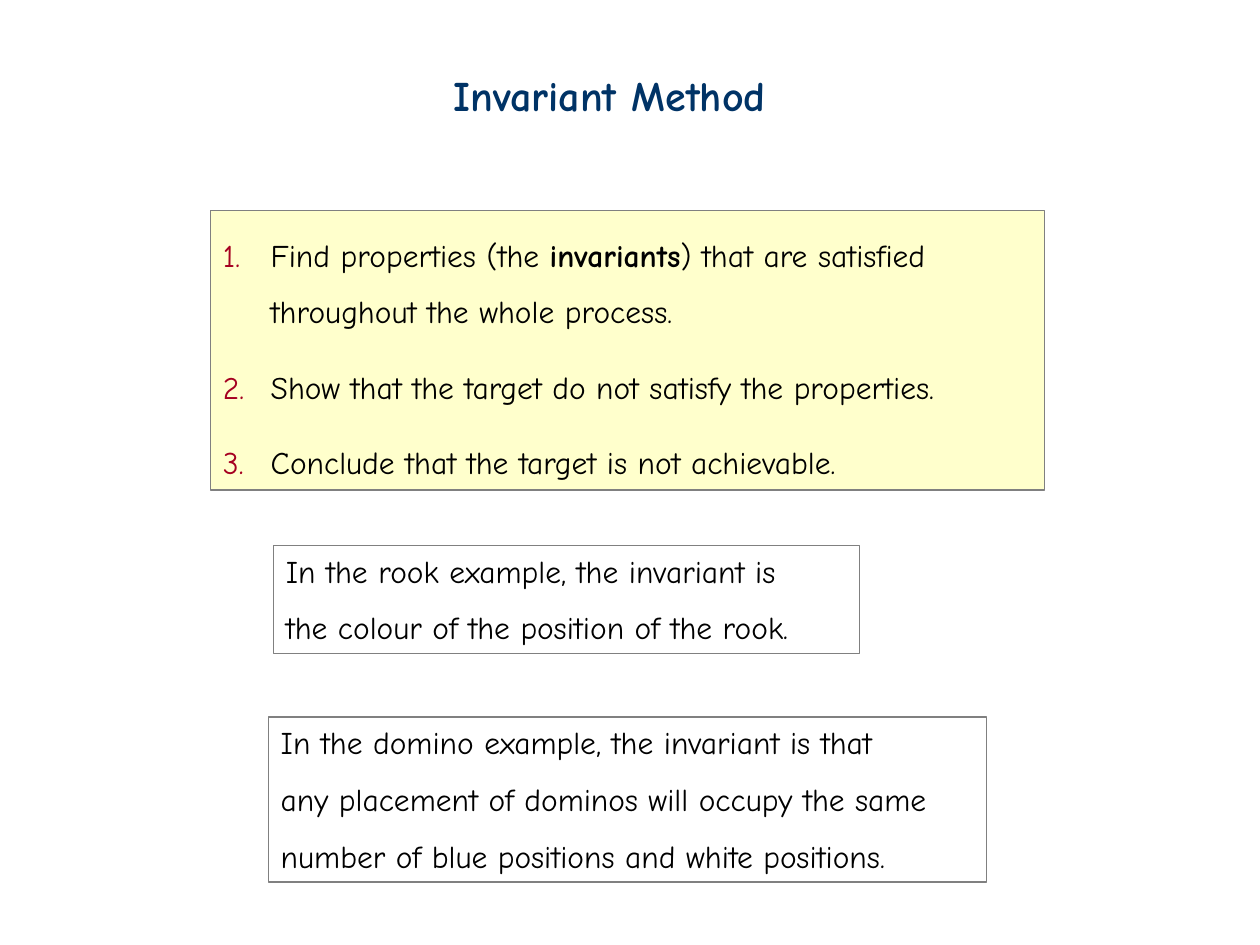
from dataclasses import dataclass

from lxml.etree import SubElement
from pptx import Presentation
from pptx.dml.color import RGBColor
from pptx.enum.shapes import MSO_SHAPE
from pptx.enum.text import MSO_ANCHOR, PP_ALIGN
from pptx.oxml.ns import qn
from pptx.util import Inches, Pt


@dataclass(frozen=True)
class Theme:
    """Colours, font and type sizes of the slide."""
    font: str = "Comic Neue"
    title_size: int = 24
    body_size: int = 18
    title: str = "003366"
    body: str = "000000"
    number: str = "A50021"
    panel: str = "FFFFCC"
    border: str = "808080"


THEME = Theme()


def number_paragraph(paragraph):
    """Give a paragraph a coloured automatic number and a hanging indent."""
    properties = paragraph._p.get_or_add_pPr()
    properties.set("marL", str(Inches(0.38)))
    properties.set("indent", str(-Inches(0.38)))
    colour = SubElement(properties, qn("a:buClr"))
    SubElement(colour, qn("a:srgbClr"), val=THEME.number)
    SubElement(properties, qn("a:buFont"), typeface=THEME.font)
    SubElement(properties, qn("a:buAutoNum"), type="arabicPeriod")


def write(paragraph, text, size=THEME.body_size, colour=THEME.body, bold=False):
    """Add one formatted run of text to a paragraph."""
    run = paragraph.add_run()
    run.text = text
    run.font.name = THEME.font
    run.font.size = Pt(size)
    run.font.bold = bold
    run.font.color.rgb = RGBColor.from_string(colour)


def add_paragraphs(frame, count):
    """Return the given number of left-aligned paragraphs in a text frame."""
    frame.word_wrap = True
    frame.vertical_anchor = MSO_ANCHOR.TOP
    paragraphs = [frame.paragraphs[0]]
    paragraphs += [frame.add_paragraph() for _ in range(count - 1)]
    for paragraph in paragraphs:
        paragraph.alignment = PP_ALIGN.LEFT
    return paragraphs


def add_title(slide, text):
    """Add the slide title."""
    title = slide.shapes.add_textbox(Inches(3.5), Inches(0.5), Inches(3.02), Inches(0.5))
    paragraph, = add_paragraphs(title.text_frame, 1)
    write(paragraph, text, size=THEME.title_size, colour=THEME.title, bold=True)


def add_panel(slide, left, top, width, height, fill=None):
    """Add a bordered rectangle and return its text frame."""
    panel = slide.shapes.add_shape(
        MSO_SHAPE.RECTANGLE, Inches(left), Inches(top), Inches(width), Inches(height))
    panel.shadow.inherit = False
    panel.line.color.rgb = RGBColor.from_string(THEME.border)
    panel.line.width = Pt(0.75)
    if fill:
        panel.fill.solid()
        panel.fill.fore_color.rgb = RGBColor.from_string(fill)
    else:
        panel.fill.background()
    return panel.text_frame


def add_steps(slide, steps):
    """Add the numbered steps, each a list of text and bold pairs."""
    frame = add_panel(slide, 1.67, 1.67, 6.62, 2.22, fill=THEME.panel)
    paragraphs = add_paragraphs(frame, len(steps))
    paragraphs[0].line_spacing = 1.5
    for paragraph in paragraphs[1:]:
        paragraph.space_before = Pt(21.5)
    for paragraph, step in zip(paragraphs, steps):
        number_paragraph(paragraph)
        for text, bold in step:
            write(paragraph, text, bold=bold)


def add_example(slide, left, top, width, height, lines):
    """Add an outlined example with widely spaced lines."""
    paragraphs = add_paragraphs(add_panel(slide, left, top, width, height), len(lines))
    for paragraph, line in zip(paragraphs, lines):
        write(paragraph, line)
    for paragraph in paragraphs[1:]:
        paragraph.line_spacing = 1.5


def main():
    """Build and save the slide."""
    deck = Presentation()
    deck.slide_width, deck.slide_height = Inches(10), Inches(7.5)
    slide = deck.slides.add_slide(deck.slide_layouts[6])
    add_title(slide, "Invariant Method")
    add_steps(slide, [
        [("Find properties (the ", False), ("invariants", True),
         (") that are satisfied throughout the whole process.", False)],
        [("Show that the target do not satisfy the properties.", False)],
        [("Conclude that the target is not achievable.", False)],
    ])
    add_example(slide, 2.17, 4.33, 4.65, 0.86, [
        "In the rook example, the invariant is",
        "the colour of the position of the rook.",
    ])
    add_example(slide, 2.13, 5.69, 5.7, 1.31, [
        "In the domino example, the invariant is that",
        "any placement of dominos will occupy the same",
        "number of blue positions and white positions.",
    ])
    deck.save("out.pptx")


if __name__ == "__main__":
    main()
